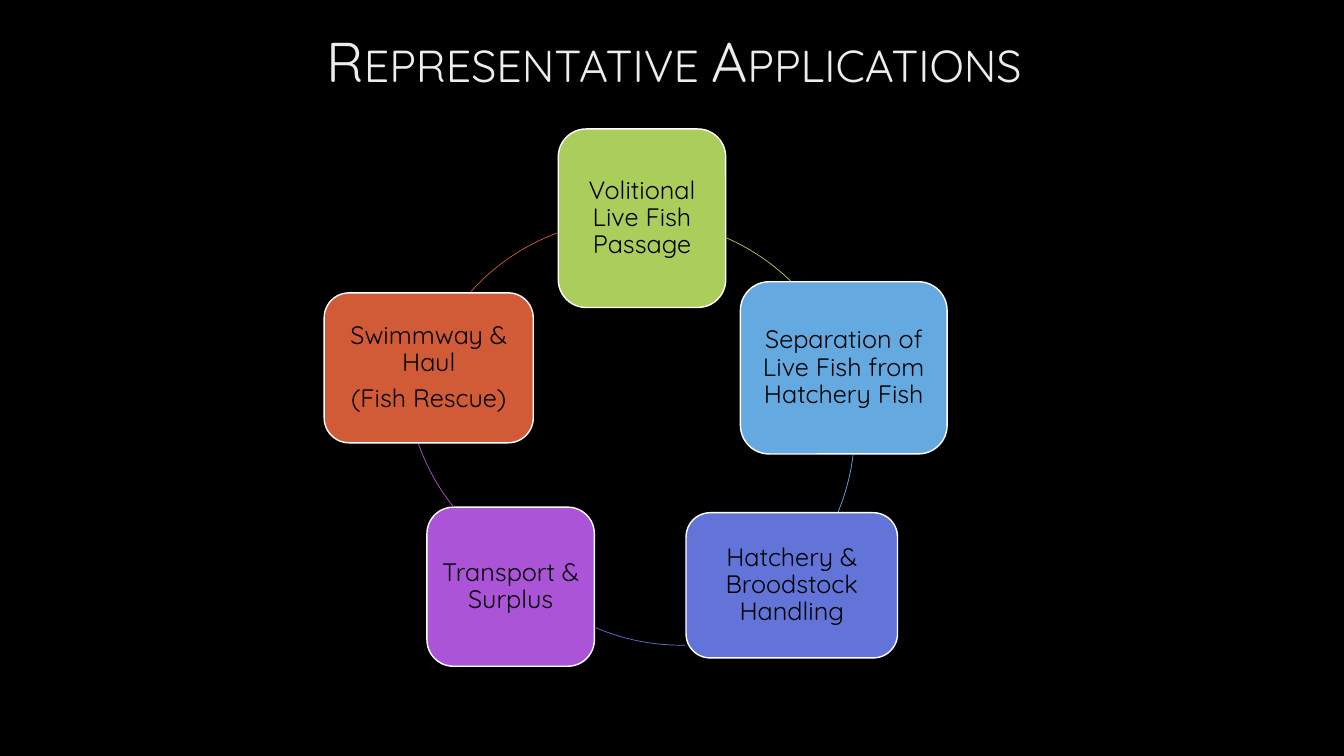
from pptx import Presentation
from pptx.dml.color import RGBColor
from pptx.enum import shapes, text
from pptx.util import Cm, Pt

FONT = "Quicksand"
TITLE = "Representative Applications"
RADIUS = 5.49

# Lines, fill, box (left, top, width, height), arc centre, arc start and end in degrees
STAGES = [
    (["Volitional Live Fish Passage"], "AACD5B",
     (14.07, 3.25, 4.22, 4.5), (16.1, 11.02), (293.7, 314.2)),
    (["Separation of Live Fish from Hatchery Fish"], "65A9E1",
     (18.66, 7.1, 5.21, 4.34), (16.05, 10.8), (6.9, 22.5)),
    (["Hatchery & Broodstock Handling"], "6274D8",
     (17.29, 12.92, 5.33, 3.66), (17.17, 10.77), (88.9, 113.1)),
    (["Transport & Surplus"], "AB54D7",
     (10.76, 12.78, 4.22, 4.01), (15.72, 9.35), (141.4, 160.6)),
    (["Swimmway & Haul", "(Fish Rescue)"], "D15B37",
     (8.17, 7.38, 5.27, 3.78), (15.95, 11.02), (222, 249.6)),
]


def rgb(code):
    return RGBColor.from_string(code)


def write(shape, lines, size, color, inset, after=0, caps=False):
    frame = shape.text_frame
    frame.word_wrap = True
    frame.vertical_anchor = text.MSO_ANCHOR.MIDDLE
    frame.margin_left = frame.margin_right = Cm(inset)
    frame.margin_top = frame.margin_bottom = Cm(inset)
    for i, line in enumerate(lines):
        para = frame.add_paragraph() if i else frame.paragraphs[0]
        para.alignment = text.PP_ALIGN.CENTER
        para.line_spacing = 0.9
        para.space_after = Pt(after)
        run = para.add_run()
        run.text = line
        run.font.name = FONT
        run.font.size = Pt(size)
        run.font.color.rgb = rgb(color)
        if caps:
            run.font._element.set("cap", "small")


def add_shape(slide, kind, box, line, width):
    shape = slide.shapes.add_shape(kind, *map(Cm, box))
    shape.shadow.inherit = False
    shape.line.color.rgb = rgb(line)
    shape.line.width = Pt(width)
    return shape


def add_box(slide, lines, fill, box):
    shape = add_shape(slide, shapes.MSO_SHAPE.ROUNDED_RECTANGLE,
                      box, "FFFFFF", 1)
    shape.fill.solid()
    shape.fill.fore_color.rgb = rgb(fill)
    write(shape, lines, 18, "000000", 0.18, after=6.3)


def add_arc(slide, center, span, color):
    """Draw a clockwise piece of the ring between two angles."""
    x, y = center
    ring = (x - RADIUS, y - RADIUS, 2 * RADIUS, 2 * RADIUS)
    arc = add_shape(slide, shapes.MSO_SHAPE.ARC, ring, color, 0.5)
    arc.fill.background()
    for i, angle in enumerate(span):
        arc.adjustments[i] = angle * 0.6  # 60000 units a degree, over 100000


def main():
    deck = Presentation()
    deck.slide_width, deck.slide_height = Cm(33.87), Cm(19.05)
    slide = deck.slides.add_slide(deck.slide_layouts[6])
    back = slide.background.fill
    back.solid()
    back.fore_color.rgb = rgb("000000")

    title = slide.shapes.add_textbox(Cm(5.39), Cm(0.58), Cm(23.19), Cm(2.08))
    write(title, [TITLE], 40, "EDEDED", 0.13, caps=True)
    for lines, color, box, center, span in STAGES:
        add_box(slide, lines, color, box)
        add_arc(slide, center, span, color)
    deck.save("out.pptx")


if __name__ == "__main__":
    main()
